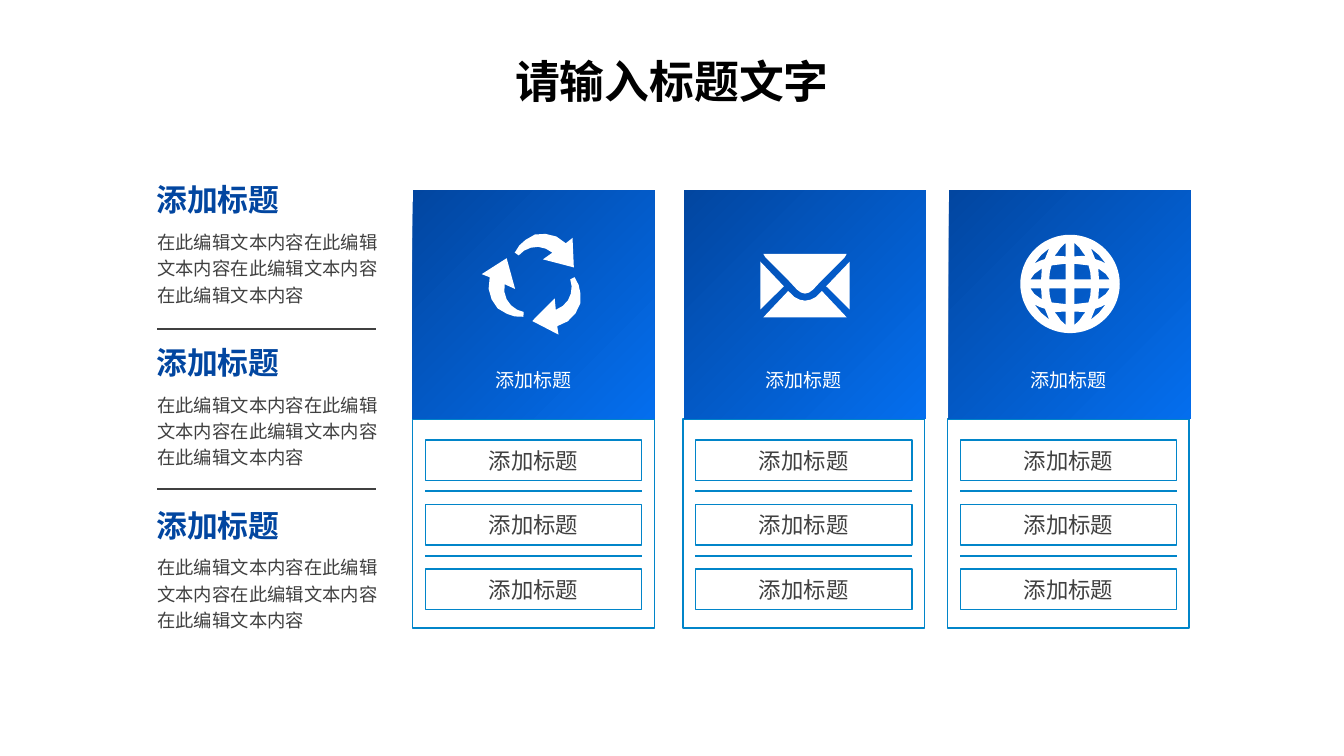
import math
from dataclasses import dataclass
from typing import Any

import lxml.etree
import pptx
import pptx.dml.color
import pptx.enum.shapes
import pptx.enum.text
import pptx.oxml.ns
import pptx.util

RGBColor = pptx.dml.color.RGBColor
NAVY = RGBColor(0x02, 0x46, 0xA0)
BLUE = RGBColor(0x04, 0x6E, 0xEE)
CYAN = RGBColor(0x01, 0x85, 0xC9)
GREY = RGBColor(0x40, 0x40, 0x40)
WHITE = RGBColor(0xFF, 0xFF, 0xFF)
BLACK = RGBColor(0x00, 0x00, 0x00)

FONT = "Noto Sans CJK SC"
HEADING = "添加标题"
BODY = "在此编辑文本内容" * 4
CELL = pptx.util.Inches(0.1)
GRID_COLUMNS, GRID_ROWS = 100, 56.25
PANEL_WIDTH, ROW_INSET, ROW_WIDTH = 18, 0.95, 16.1
ROW_COUNT = 3
CENTER = pptx.enum.text.PP_ALIGN.CENTER

Point = tuple[float, float]
Contour = list[Point]


@dataclass(frozen=True)
class Box:
    column: float
    row: float
    width: float
    height: float

    def lengths(self) -> list[int]:
        return [cells(value) for value in (self.column, self.row, self.width, self.height)]


@dataclass(frozen=True)
class Style:
    size: float
    color: RGBColor
    bold: bool = False
    gradient: bool = False
    alignment: Any = None
    line_spacing: float | None = None
    wrap: bool = True
    inset: tuple[float, float] = (1, 0.5)


@dataclass(frozen=True)
class Icon:
    center: Point
    contours: list[Contour]


@dataclass(frozen=True)
class Panel:
    column: float
    header_column: float
    icon: Icon


TITLE = Style(24, BLACK, bold=True, alignment=CENTER, wrap=False)
SIDE_HEADING = Style(16.5, NAVY, bold=True, gradient=True, inset=(0.75, 0.38))
SIDE_BODY = Style(9.8, GREY, line_spacing=1.2, inset=(0.75, 0.38))
ROW_LABEL = Style(12, GREY, alignment=CENTER)
HEADER_LABEL = Style(10.2, WHITE, alignment=CENTER)


def cells(value: float) -> int:
    return round(value * CELL)


def mirror(contour: Contour, across: float, down: float) -> Contour:
    return [(x * across, y * down) for x, y in contour]


def rotate(contour: Contour, degrees: float) -> Contour:
    cosine, sine = math.cos(math.radians(degrees)), math.sin(math.radians(degrees))
    return [(x * cosine - y * sine, x * sine + y * cosine) for x, y in contour]


def recycling_contours() -> list[Contour]:
    arrow = [(2.6, -3.3), (2.1, -2.9), (1.4, -3.4), (0.6, -3.6), (-0.2, -3.55), (-0.9, -3.15),
             (-1.35, -2.75), (-1.7, -2.2), (-1.4, -2), (-1, -2.35), (-0.5, -2.57), (0.05, -2.63),
             (0.6, -2.5), (1.1, -2.2), (0.4, -1.7), (2.7, -1.1)]
    return [rotate(arrow, 120 * turn) for turn in range(3)]


def envelope_contours() -> list[Contour]:
    side = [(-3.32, -1.78), (-3.32, 1.78), (-1.58, 0.05)]
    flap = [(-3.1, -2.36), (-2.95, -2.1), (-1.2, -0.35), (-0.6, 0.3), (-0.3, 0.52), (0, 0.6)]
    base = [(-3.1, 2.36), (-2.95, 2.2), (-1.25, 0.4), (-0.8, 0.85), (-0.4, 1.05), (0, 1.12)]
    halves = [half + mirror(half, -1, 1)[::-1] for half in (flap, base)]
    return [side, mirror(side, -1, 1), *halves]


def globe_contours() -> list[Contour]:
    rim = [(3.7 * math.cos(math.radians(angle)), 3.66 * math.sin(math.radians(angle)))
           for angle in range(0, 360, 5)]
    holes = [
        [(0.33, -3.05), (0.33, -2.05), (1.15, -2.1), (0.98, -2.3), (0.7, -2.7)],
        [(0.33, -1.5), (0.33, -0.33), (1.55, -0.33), (1.5, -0.9), (1.37, -1.38)],
        [(2.15, -0.33), (2.95, -0.33), (2.65, -0.75), (2.1, -1.15)],
        [(1.87, -1.85), (2.3, -1.7), (2.65, -1.52), (2.15, -2.15), (1.55, -2.65)],
    ]
    return [rim] + [mirror(hole, across, down)
                    for hole in holes for across in (-1, 1) for down in (-1, 1)]


def paint_gradient(fill: Any) -> None:
    fill.gradient()
    fill.gradient_angle = 315
    for stop, color in zip(fill.gradient_stops, (NAVY, BLUE)):
        stop.color.rgb = color


def write_text(shape: Any, text: str, style: Style) -> None:
    frame = shape.text_frame
    frame.word_wrap = style.wrap
    frame.auto_size = pptx.enum.text.MSO_AUTO_SIZE.SHAPE_TO_FIT_TEXT
    frame.margin_left = frame.margin_right = cells(style.inset[0])
    frame.margin_top = frame.margin_bottom = cells(style.inset[1])
    paragraph = frame.paragraphs[0]
    paragraph.text = text
    paragraph.alignment = style.alignment
    paragraph.line_spacing = style.line_spacing
    font = paragraph.font
    font.size = pptx.util.Pt(style.size)
    font.bold = style.bold
    font.name = FONT
    if style.gradient:
        paint_gradient(font.fill)
    else:
        font.color.rgb = style.color
    properties = paragraph._p.pPr.find(pptx.oxml.ns.qn("a:defRPr"))
    lxml.etree.SubElement(properties, pptx.oxml.ns.qn("a:ea"), typeface=FONT)


def add_text(shapes: Any, box: Box, text: str, style: Style) -> None:
    write_text(shapes.add_textbox(*box.lengths()), text, style)


def add_rectangle(shapes: Any, box: Box) -> Any:
    shape = shapes.add_shape(pptx.enum.shapes.MSO_SHAPE.RECTANGLE, *box.lengths())
    shape.shadow.inherit = False
    return shape


def add_outline(shapes: Any, box: Box, weight: float) -> Any:
    shape = add_rectangle(shapes, box)
    shape.fill.background()
    shape.line.color.rgb = CYAN
    shape.line.width = pptx.util.Pt(weight)
    return shape


def add_divider(shapes: Any, column: float, row: float, width: float, color: RGBColor) -> None:
    connector = shapes.add_connector(pptx.enum.shapes.MSO_CONNECTOR.STRAIGHT, cells(column),
                                     cells(row), cells(column + width), cells(row))
    connector.line.color.rgb = color
    connector.line.width = pptx.util.Pt(1)
    lxml.etree.SubElement(connector._element.spPr, pptx.oxml.ns.qn("a:effectLst"))


def add_icon(shapes: Any, icon: Icon) -> None:
    contours = [[(cells(icon.center[0] + x), cells(icon.center[1] + y)) for x, y in contour]
                for contour in icon.contours]
    builder = shapes.build_freeform(*contours[0][0])
    for index, contour in enumerate(contours):
        if index:
            builder.move_to(*contour[0])
        builder.add_line_segments(contour[1:], close=True)
    shape = builder.convert_to_shape()
    shape.shadow.inherit = False
    shape.fill.solid()
    shape.fill.fore_color.rgb = WHITE
    shape.line.fill.background()


def add_panel(slide: Any, panel: Panel) -> None:
    inner = panel.column + ROW_INSET
    body = slide.shapes.add_group_shape().shapes
    for index in range(ROW_COUNT):
        row = add_outline(body, Box(inner, 32.75 + 4.8 * index, ROW_WIDTH, 3), 0.75)
        write_text(row, HEADING, ROW_LABEL)
    add_outline(body, Box(panel.column, 31.2, PANEL_WIDTH, 15.5), 1)
    for index in range(ROW_COUNT - 1):
        add_divider(body, inner, 36.55 + 4.8 * index, ROW_WIDTH, CYAN)

    header = slide.shapes.add_group_shape().shapes
    background = add_rectangle(header, Box(panel.header_column, 14.15, PANEL_WIDTH, 17))
    paint_gradient(background.fill)
    background.line.fill.background()
    add_icon(header, panel.icon)
    add_text(header, Box(inner, 26.9, ROW_WIDTH, 2.7), HEADING, HEADER_LABEL)


def main() -> None:
    presentation = pptx.Presentation()
    presentation.slide_width = cells(GRID_COLUMNS)
    presentation.slide_height = cells(GRID_ROWS)
    slide = presentation.slides.add_slide(presentation.slide_layouts[6])

    for index in range(ROW_COUNT):
        top = 13.1 + 12.1 * index
        add_text(slide.shapes, Box(10.9, top, 12.1, 3.5), HEADING, SIDE_HEADING)
        add_text(slide.shapes, Box(10.95, top + 3.4, 18.6, 6.7), BODY, SIDE_BODY)
    for row in (24.5, 36.4):
        add_divider(slide.shapes, 11.7, row, 16.3, GREY)

    for panel in (
        Panel(30.7, 30.7, Icon((40, 21), recycling_contours())),
        Panel(50.8, 50.9, Icon((59.9, 21.25), envelope_contours())),
        Panel(70.5, 70.6, Icon((79.62, 21.13), globe_contours())),
    ):
        add_panel(slide, panel)

    add_text(slide.shapes, Box(37.3, 3.5, 25.4, 5), "请输入标题文字", TITLE)
    presentation.save("out.pptx")


if __name__ == "__main__":
    main()
